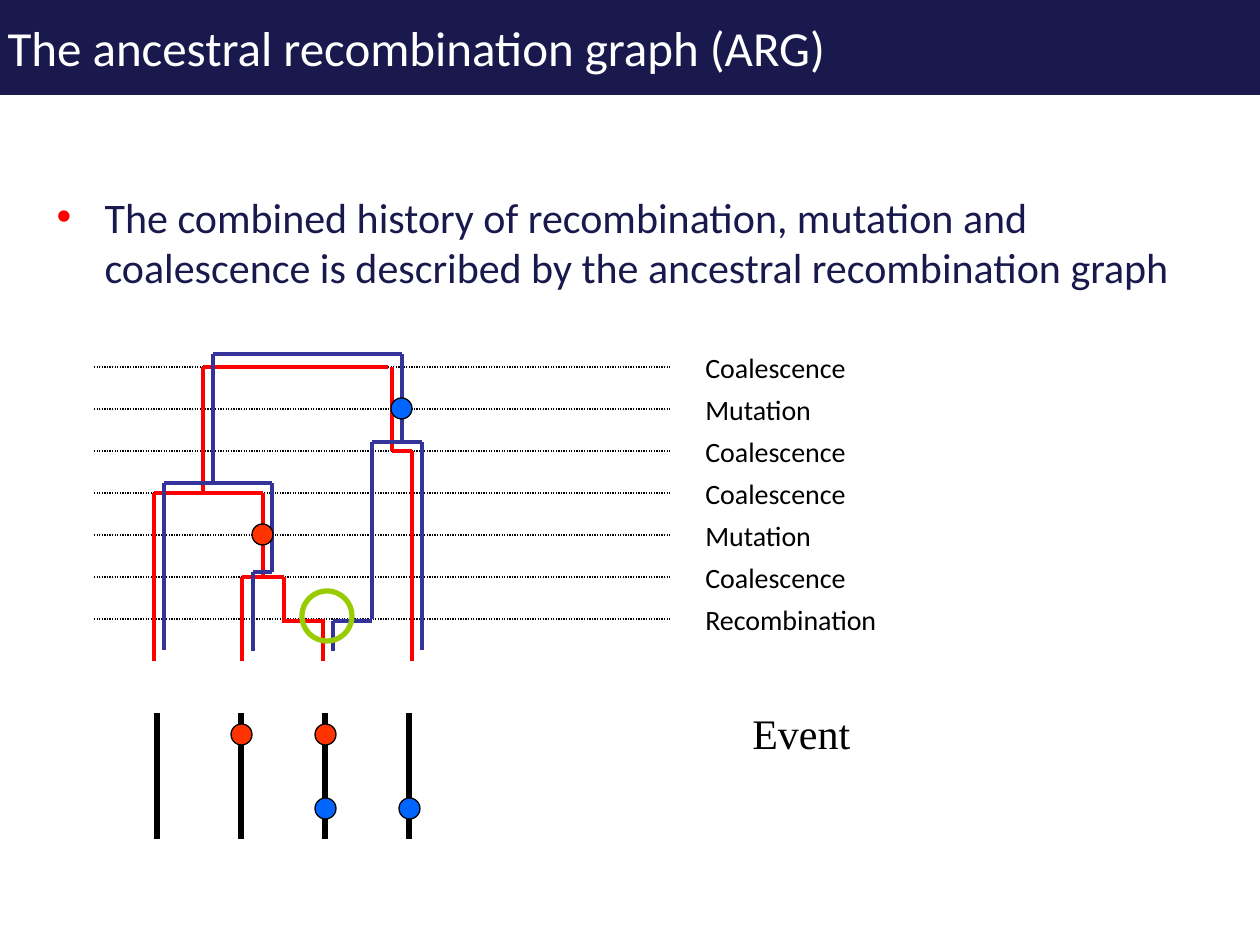
from lxml.etree import SubElement
from pptx import Presentation
from pptx.dml.color import RGBColor
from pptx.enum.dml import MSO_LINE as Dash
from pptx.enum.shapes import MSO_CONNECTOR as Connector, MSO_SHAPE as Shape
from pptx.enum.text import MSO_ANCHOR as Anchor, MSO_AUTO_SIZE as AutoSize, PP_ALIGN as Align
from pptx.oxml.ns import qn
from pptx.util import Emu, Pt

SCALE = 914400 / 126
COLORS = {
    "navy": "19194D", "white": "FFFFFF", "black": "000000", "red": "FF0000",
    "violet": "333399", "orange": "FF3300", "blue": "0066FF", "green": "99CC00",
}
FORMATS = {
    "title": {"name": "Calibri", "size": Pt(28), "color": "white"},
    "body": {"name": "Calibri", "size": Pt(24), "color": "navy"},
    "label": {"name": "Calibri", "size": Pt(16), "color": "black"},
    "heading": {"name": "Times New Roman", "size": Pt(24), "color": "black"},
}
EVENTS = ["Coalescence", "Mutation", "Coalescence", "Coalescence",
          "Mutation", "Coalescence", "Recombination"]
EVENT_TOP, EVENT_STEP = 367, 42
RED_TREE = [
    (154, 661, 154, 493), (242, 661, 242, 577), (323, 661, 323, 619),
    (412, 661, 412, 451), (242, 577, 284, 577), (263, 577, 263, 493),
    (154, 493, 263, 493), (284, 577, 284, 619), (203, 493, 203, 367),
    (392, 451, 412, 451), (392, 451, 392, 367), (388, 367, 203, 367),
    (282, 621, 323, 621),
]
VIOLET_TREE = [
    (272, 572, 272, 483), (333, 621, 372, 621), (372, 619, 372, 442),
    (164, 650, 164, 483), (422, 650, 422, 442), (164, 483, 213, 483),
    (213, 483, 213, 354), (333, 651, 333, 621), (253, 651, 253, 572),
    (253, 572, 272, 572), (213, 483, 272, 483), (372, 442, 422, 442),
    (402, 442, 402, 354), (213, 354, 402, 354),
]
MUTATIONS = [
    (252, 524, "orange"), (391, 398, "blue"), (231, 724, "orange"),
    (315, 724, "orange"), (315, 798, "blue"), (399, 798, "blue"),
]


def px(length):
    return Emu(round(length * SCALE))


def rgb(name):
    return RGBColor.from_string(COLORS[name])


class SlideBuilder:
    def __init__(self, page):
        self.page = page

    def fill_text(self, frame, text, style, **settings):
        for key, value in settings.items():
            setattr(frame, key, value)
        para = frame.paragraphs[0]
        para.alignment = Align.LEFT
        span = para.add_run()
        span.text = text
        for key, value in FORMATS[style].items():
            if key == "color":
                span.font.color.rgb = rgb(value)
            else:
                setattr(span.font, key, value)
        return para

    def placeholder(self, index, bounds, text, style, **settings):
        box = self.page.placeholders[index]
        for key, value in zip(("left", "top", "width", "height"), bounds):
            setattr(box, key, px(value))
        para = self.fill_text(box.text_frame, text, style, auto_size=AutoSize.NONE, **settings)
        return box, para

    def title(self, bounds, text):
        box, _ = self.placeholder(0, bounds, text, "title", vertical_anchor=Anchor.MIDDLE)
        box.fill.solid()
        box.fill.fore_color.rgb = rgb("navy")

    def bullet(self, bounds, text):
        _, para = self.placeholder(1, bounds, text, "body", vertical_anchor=Anchor.TOP)
        props = para._p.get_or_add_pPr()
        props.set("marL", str(px(48)))
        props.set("indent", str(px(-48)))
        color = SubElement(props, qn("a:buClr"))
        SubElement(color, qn("a:srgbClr"), val=COLORS["red"])
        SubElement(props, qn("a:buChar"), char="•")

    def text(self, bounds, text, style, wrap=True):
        box = self.page.shapes.add_textbox(*map(px, bounds))
        self.fill_text(box.text_frame, text, style, word_wrap=wrap,
                       auto_size=AutoSize.SHAPE_TO_FIT_TEXT)

    def line(self, ends, color, width, dash=None):
        line = self.page.shapes.add_connector(Connector.STRAIGHT, *map(px, ends))
        line.line.color.rgb = rgb(color)
        line.line.width = Pt(width)
        if dash:
            line.line.dash_style = dash
        SubElement(line._element.spPr, qn("a:effectLst"))

    def circle(self, left, top, size, fill, outline, width):
        circle = self.page.shapes.add_shape(Shape.OVAL, *map(px, (left, top, size, size)))
        circle.shadow.inherit = False
        if fill:
            circle.fill.solid()
            circle.fill.fore_color.rgb = rgb(fill)
        else:
            circle.fill.background()
        circle.line.color.rgb = rgb(outline)
        circle.line.width = Pt(width)


def main():
    deck = Presentation()
    deck.slide_width, deck.slide_height = px(1260), px(945)
    builder = SlideBuilder(deck.slides.add_slide(deck.slide_layouts[1]))

    builder.title((-5, -2, 1265, 97), "The ancestral recombination graph (ARG)")
    builder.bullet((44, 185, 1181, 567),
                   "The combined history of recombination, mutation and "
                   "coalescence is described by the ancestral recombination graph")

    for row, event in enumerate(EVENTS):
        level = EVENT_TOP + row * EVENT_STEP
        builder.line((94, level, 671, level), "black", 0.75, Dash.ROUND_DOT)
        builder.text((693, level - 23, 305, 47), event, "label")
    builder.text((740, 701, 123, 63), "Event", "heading", wrap=False)

    for color, branches in (("red", RED_TREE), ("violet", VIOLET_TREE)):
        for branch in branches:
            builder.line(branch, color, 2.25)
    for column in range(4):
        center = 157 + column * 84
        builder.line((center, 713, center, 839), "black", 3)
    for left, top, color in MUTATIONS:
        builder.circle(left, top, 21, color, "black", 0.75)
    builder.circle(302, 591, 50, None, "green", 3)

    deck.save("out.pptx")


if __name__ == "__main__":
    main()
